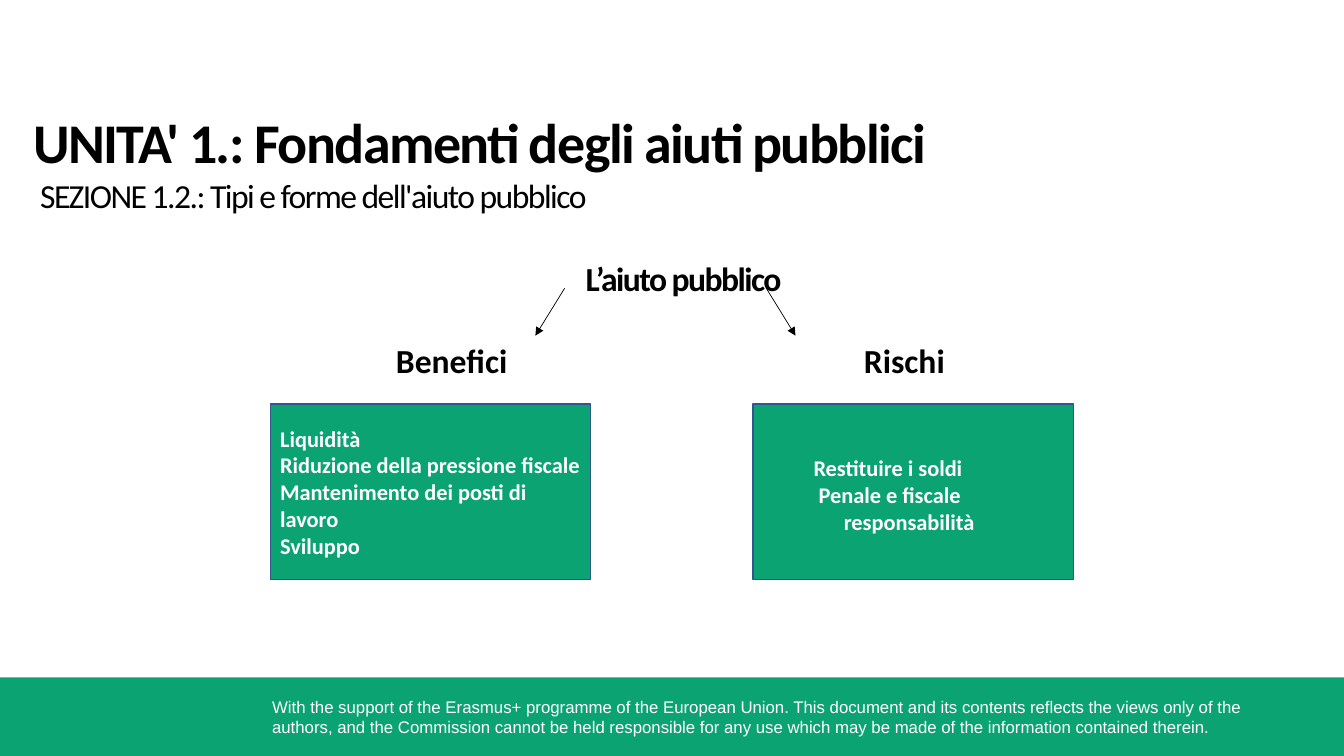
import pptx
import pptx.util
import pptx.dml.color
import pptx.enum.shapes
import pptx.enum.text
import pptx.oxml.ns
from lxml import etree

Inches = pptx.util.Inches
Pt = pptx.util.Pt
Align = pptx.enum.text.PP_ALIGN
Anchor = pptx.enum.text.MSO_ANCHOR
Shape = pptx.enum.shapes.MSO_SHAPE

GREEN, BLUE, BLACK, WHITE = "0CA373", "325491", "000000", "FFFFFF"
WIDTH, HEIGHT = 13.33, 7.5
TIGHT = -1.1


def colour(code):
    return pptx.dml.color.RGBColor.from_string(code)


def write(para, text, size, code, name="Calibri", bold=False,
          align=Align.LEFT, indent=0, tracking=0):
    """Fill one paragraph; indent in inches, tracking in points."""
    if indent:
        para._p.get_or_add_pPr().set("marL", str(Inches(indent)))
    para.alignment = align
    font = para.font
    font.name, font.size, font.bold = name, Pt(size), bold
    font.color.rgb = colour(code)
    span = para.add_run()
    span.text = text
    if tracking:
        span._r.get_or_add_rPr().set("spc", str(round(tracking * 100)))


def text_box(page, left, top, width, height):
    box = page.shapes.add_textbox(*map(Inches, (left, top, width, height)))
    box.text_frame.word_wrap = True
    return box.text_frame


def rectangle(page, left, top, width, height, fill):
    box = page.shapes.add_shape(
        Shape.RECTANGLE, *map(Inches, (left, top, width, height)))
    box.shadow.inherit = False
    box.fill.solid()
    box.fill.fore_color.rgb = colour(fill)
    return box


def footer(page, left, top, width, height):
    band = rectangle(page, left, top, width, height, GREEN)
    band.line.fill.background()
    frame = text_box(page, left + 2.6, top + 0.14, width - 2.91, 0.5)
    write(frame.paragraphs[0],
          "With the support of the Erasmus+ programme of the European Union. "
          "This document and its contents reflects the views only of the "
          "authors, and the Commission cannot be held responsible for any use "
          "which may be made of the information contained therein.",
          12, WHITE, name="Arial")


def heading(page, left, top, width, height):
    frame = text_box(page, left, top, width, height)
    write(frame.paragraphs[0], "UNITA' 1.: Fondamenti degli aiuti pubblici",
          40, BLACK, bold=True, tracking=TIGHT)
    write(frame.add_paragraph(),
          "SEZIONE 1.2.: Tipi e forme dell'aiuto pubblico",
          24, BLACK, indent=0.07, tracking=TIGHT)


def label(page, centre, top, text, tracking=0):
    width = 3
    frame = text_box(page, centre - width / 2, top, width, 0.5)
    write(frame.paragraphs[0], text, 24, BLACK, bold=True,
          align=Align.CENTER, tracking=tracking)


def card(page, left, top, width, height, lines, top_margin=0.05):
    """Green box; lines are pairs of text and indent."""
    box = rectangle(page, left, top, width, height, GREEN)
    box.line.color.rgb = colour(BLUE)
    box.line.width = Pt(1)
    frame = box.text_frame
    frame.word_wrap = True
    frame.vertical_anchor = Anchor.MIDDLE
    frame.margin_top = Inches(top_margin)
    for number, (text, indent) in enumerate(lines):
        para = frame.add_paragraph() if number else frame.paragraphs[0]
        write(para, text, 16, WHITE, bold=True, indent=indent)


def arrow(page, start, end):
    line = page.shapes.add_connector(
        pptx.enum.shapes.MSO_CONNECTOR.STRAIGHT,
        *map(Inches, (*start, *end)))
    line.line.color.rgb = colour(BLACK)
    line.line.width = Pt(0.5)
    qn = pptx.oxml.ns.qn
    etree.SubElement(line.line._get_or_add_ln(), qn("a:tailEnd"),
                     type="triangle")
    etree.SubElement(line._element.spPr, qn("a:effectLst"))


def diagram(page, left, top, width):
    """Tree from public aid to its benefits and risks."""
    label(page, left + 4.1, top, "L’aiuto pubblico", TIGHT)
    label(page, left + 1.8, top + 0.81, "Benefici")
    label(page, left + 6.29, top + 0.81, "Rischi")

    card_width, card_height, card_top = 3.18, 1.74, top + 1.5
    card(page, left + width - card_width, card_top, card_width, card_height,
         [("Restituire i soldi", 0.5), ("Penale e fiscale", 0.55),
          ("responsabilità", 0.8)], top_margin=0.1)
    card(page, left, card_top, card_width, card_height,
         [(text, 0) for text in (
             "Liquidità", "Riduzione della pressione fiscale",
             "Mantenimento dei posti di lavoro", "Sviluppo")])

    # Arrows mirrored about a shared axis
    axis = left + 3.92
    for side in (-1, 1):
        arrow(page, (axis + side, top + 0.35),
              (axis + side * 1.29, top + 0.82))


def main():
    deck = pptx.Presentation()
    deck.slide_width, deck.slide_height = Inches(WIDTH), Inches(HEIGHT)
    page = deck.slides.add_slide(deck.slide_layouts[6])
    footer(page, 0, 6.72, WIDTH, 0.78)
    heading(page, 0.23, 1.02, 12.93, 1.2)
    diagram(page, 2.68, 2.51, 7.97)
    deck.save("out.pptx")


if __name__ == "__main__":
    main()
